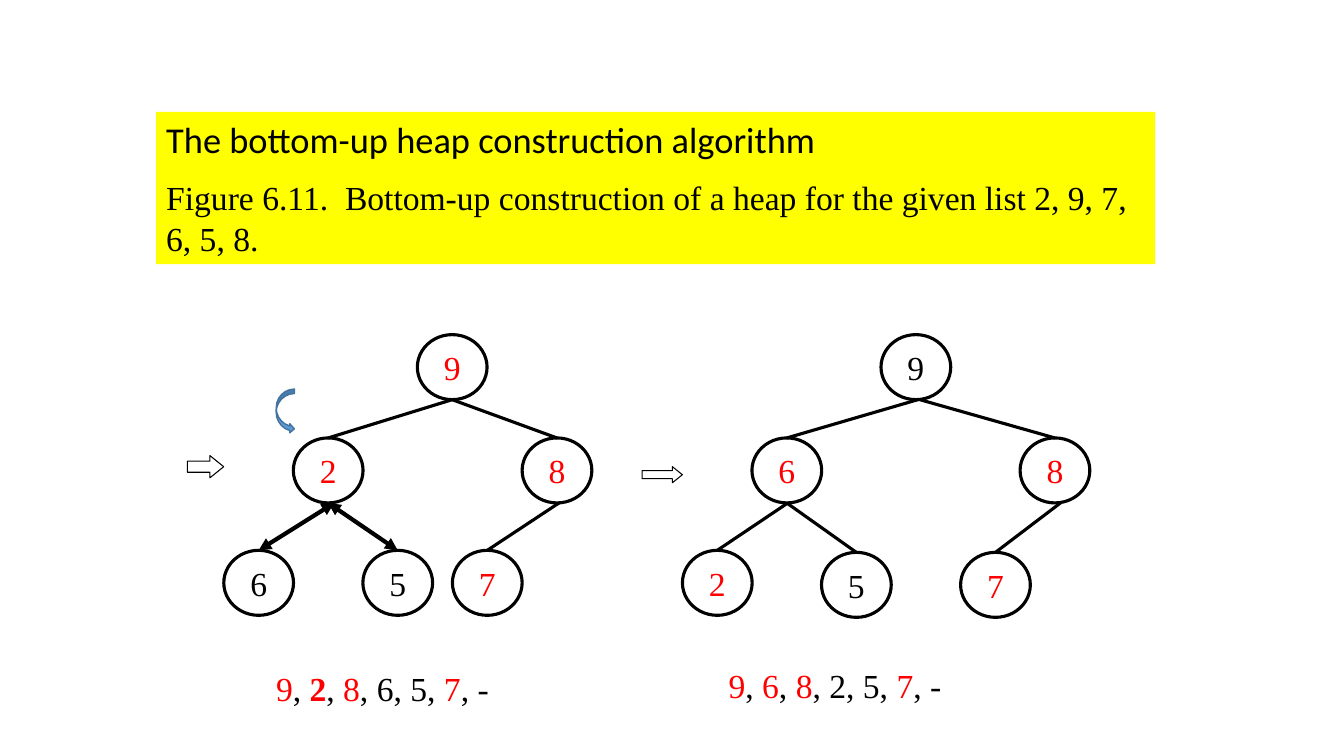
from dataclasses import dataclass

from lxml import etree
from pptx import Presentation
from pptx import util as u
from pptx.dml.color import RGBColor
from pptx.enum import shapes, text
from pptx.oxml import ns

COLUMNS, ROWS = 80, 45
CELL = u.Inches(1) / 6
NODE_WIDTH, NODE_HEIGHT = 4.15, 3.87


@dataclass(frozen=True)
class Theme:
    black: str = "000000"
    red: str = "FF0000"
    white: str = "FFFFFF"
    yellow: str = "FFFF00"
    blue: str = "5B9BD5"
    dark_blue: str = "43739E"
    heading_font: str = "Calibri"
    body_font: str = "Times New Roman"
    heading_size: float = 26
    body_size: float = 24
    thin: float = 0.75
    outline: float = 2.25
    thick: float = 3


def grid(*lengths):
    return [u.Emu(round(length * CELL)) for length in lengths]


def write(paragraph, words, *, font, size, color, bold=False):
    run = paragraph.add_run()
    run.text = words
    run.font.name = font
    run.font.size = u.Pt(size)
    run.font.bold = bold
    run.font.color.rgb = RGBColor.from_string(color)


class HeapSlide:
    def __init__(self, slide, theme):
        self.slide = slide
        self.theme = theme
        self.body = {"font": theme.body_font, "size": theme.body_size}

    def shape(self, kind, box, fill, line=None, width=None):
        shape = self.slide.shapes.add_shape(kind, *grid(*box))
        shape.shadow.inherit = False
        shape.fill.solid()
        shape.fill.fore_color.rgb = RGBColor.from_string(fill)
        if line:
            shape.line.color.rgb = RGBColor.from_string(line)
            shape.line.width = u.Pt(width)
        else:
            shape.line.fill.background()
        return shape

    def banner(self, box, heading, caption):
        theme = self.theme
        frame = self.shape(shapes.MSO_SHAPE.RECTANGLE, box, theme.yellow).text_frame
        frame.word_wrap = True
        frame.auto_size = text.MSO_AUTO_SIZE.SHAPE_TO_FIT_TEXT
        frame.vertical_anchor = text.MSO_ANCHOR.TOP
        first, second = frame.paragraphs[0], frame.add_paragraph()
        for paragraph, space in ((first, 12), (second, 6)):
            paragraph.alignment = text.PP_ALIGN.LEFT
            paragraph.space_after = u.Pt(space)
        write(first, heading, font=theme.heading_font, size=theme.heading_size, color=theme.black)
        write(second, caption, color=theme.black, **self.body)

    def node(self, left, top, key, color):
        box = (left, top, NODE_WIDTH, NODE_HEIGHT)
        shape = self.shape(shapes.MSO_SHAPE.OVAL, box, self.theme.white,
                           self.theme.black, self.theme.outline)
        shape.text_frame.vertical_anchor = text.MSO_ANCHOR.MIDDLE
        paragraph = shape.text_frame.paragraphs[0]
        paragraph.alignment = text.PP_ALIGN.CENTER
        write(paragraph, key, color=color, **self.body)

    def edge(self, parent, child, shift=0, swap=False):
        start = (parent[0] + NODE_WIDTH / 2 + shift, parent[1] + NODE_HEIGHT)
        end = (child[0] + NODE_WIDTH / 2, child[1])
        connector = self.slide.shapes.add_connector(
            shapes.MSO_CONNECTOR.STRAIGHT, *grid(*start, *end))
        connector.line.color.rgb = RGBColor.from_string(self.theme.black)
        connector.line.width = u.Pt(self.theme.thick if swap else self.theme.outline)
        if swap:
            line = connector.line._get_or_add_ln()
            for tag in ("a:headEnd", "a:tailEnd"):
                etree.SubElement(line, ns.qn(tag), type="triangle")
        etree.SubElement(connector._element.spPr, ns.qn("a:effectLst"))

    def tree(self, nodes, edges):
        for left, top, key, color in nodes:
            self.node(left, top, key, color)
        for parent, child, shift, swap in edges:
            self.edge(nodes[parent], nodes[child], shift, swap)

    def step_arrow(self, box):
        arrow = self.shape(shapes.MSO_SHAPE.RIGHT_ARROW, box, self.theme.white,
                           self.theme.black, self.theme.thin)
        arrow.adjustments[0] = 0.5
        arrow.adjustments[1] = 0.62

    def swap_arrow(self, box):
        self.shape(shapes.MSO_SHAPE.CURVED_RIGHT_ARROW, box,
                   self.theme.blue, self.theme.dark_blue, 1)

    def key_list(self, box, pieces):
        frame = self.slide.shapes.add_textbox(*grid(*box)).text_frame
        frame.word_wrap = True
        frame.auto_size = text.MSO_AUTO_SIZE.SHAPE_TO_FIT_TEXT
        for words, color, bold in pieces:
            write(frame.paragraphs[0], words, color=color, bold=bold, **self.body)


def main():
    presentation = Presentation()
    presentation.slide_width, presentation.slide_height = grid(COLUMNS, ROWS)
    slide = presentation.slides.add_slide(presentation.slide_layouts[6])
    theme = Theme()
    heap = HeapSlide(slide, theme)
    black, red = theme.black, theme.red

    heap.banner((9.3, 6.66, 59.46, 9.06),
                "The bottom-up heap construction algorithm",
                "Figure 6.11.  Bottom-up construction of a heap "
                "for the given list 2, 9, 7, 6, 5, 8.")

    root, middle, leaf = 19.92, 26.07, 32.76
    before = [
        (24.84, root, "9", red),
        (17.46, middle, "2", red), (31.08, middle, "8", red),
        (13.32, leaf, "6", black), (21.6, leaf, "5", black), (26.93, leaf, "7", red),
    ]
    after = [
        (52.44, root, "9", black),
        (44.76, middle, "6", red), (60.72, middle, "8", red),
        (40.62, leaf, "2", red), (48.9, leaf + 0.12, "5", black),
        (57.18, leaf + 0.12, "7", red),
    ]
    heap.tree(before, [(0, 1, 0, False), (0, 2, 0, False), (1, 3, 0.36, True),
                       (1, 4, 0, True), (2, 5, 0.12, False)])
    heap.tree(after, [(0, 1, 0.12, False), (0, 2, 0.24, False), (1, 3, 0.06, False),
                      (1, 4, 0, False), (2, 5, 0.33, False)])

    heap.step_arrow((11.16, 27.12, 2.16, 1.32))
    heap.step_arrow((38.22, 27.78, 2.4, 0.96))
    heap.swap_arrow((16.44, 23.16, 1.08, 2.64))

    for left, top, swapped, leaves, bold in (
        (15.84, 39.48, "2", ", 6, 5, ", True),
        (42.78, 39.3, "6", ", 2, 5, ", False),
    ):
        heap.key_list((left, top, 15.66, 3), [
            ("9", red, False), (", ", black, False),
            (swapped, red, bold), (", ", black, False),
            ("8", red, False), (leaves, black, False),
            ("7", red, False), (", -", black, False),
        ])

    presentation.save("out.pptx")


if __name__ == "__main__":
    main()
